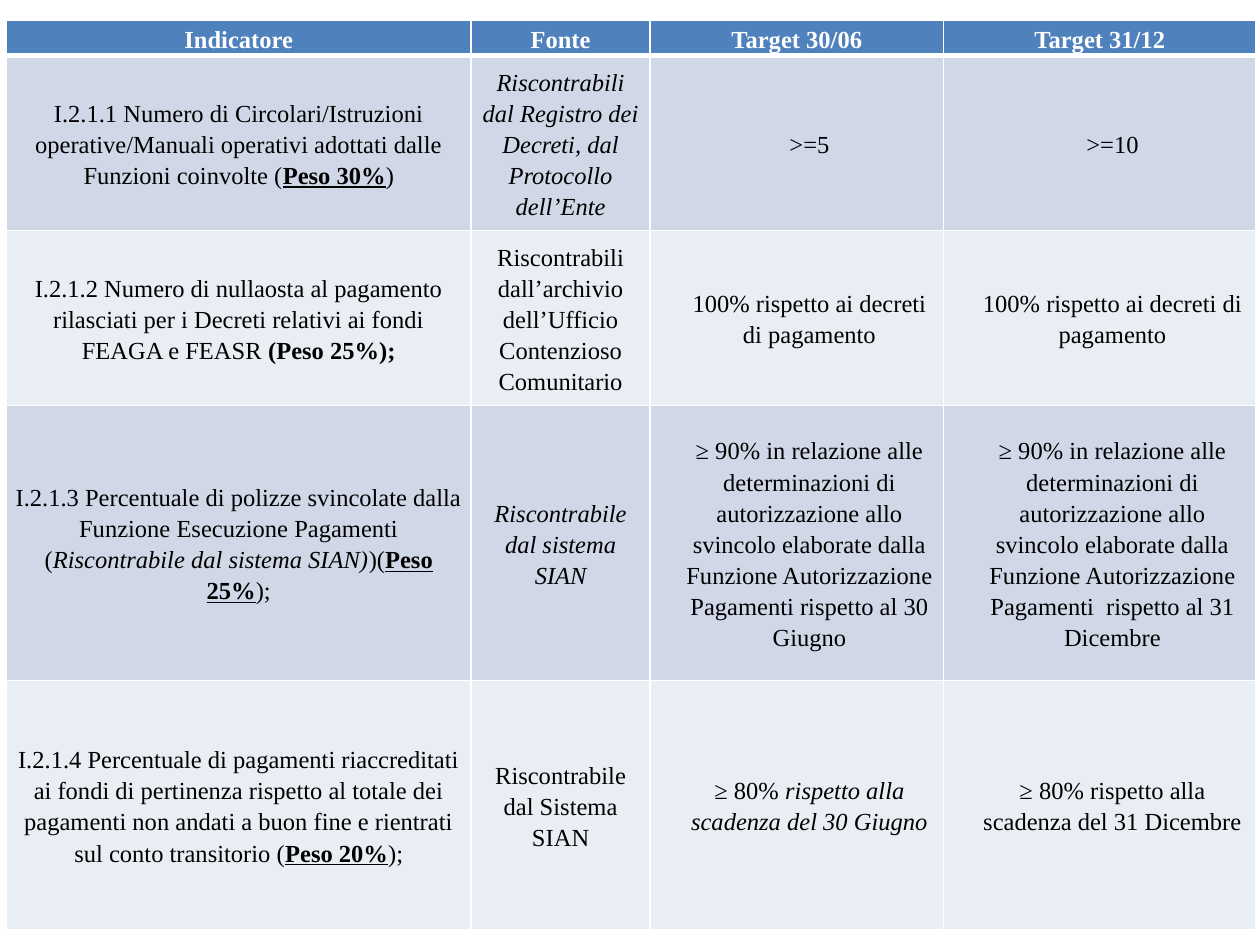
from dataclasses import dataclass

from lxml import etree
from pptx import Presentation
from pptx.dml.color import RGBColor
from pptx.enum.text import MSO_ANCHOR, PP_ALIGN
from pptx.oxml.ns import qn
from pptx.util import Inches, Pt

WHITE = RGBColor(0xFF, 0xFF, 0xFF)
BLACK = RGBColor(0x00, 0x00, 0x00)
HEADER_BLUE = RGBColor(0x4F, 0x81, 0xBD)
BANDS = (RGBColor(0xD0, 0xD8, 0xE8), RGBColor(0xE9, 0xED, 0xF4))

FONT = "Times New Roman"
COLUMN_WIDTHS = (3.69, 1.42, 2.33, 2.48)
ROW_HEIGHTS = (0.28, 1.39, 1.39, 2.18, 1.98)
TARGET_COLUMN = 2  # target columns start here and are indented


@dataclass(frozen=True)
class Span:
    text: str
    bold: bool = False
    italic: bool = False
    underline: bool = False


@dataclass(frozen=True)
class CellStyle:
    fill: RGBColor
    color: RGBColor
    bold: bool = False
    space_after: int = 0
    indent: float = 0
    bottom_line: int = 1


def weight(text: str) -> Span:
    return Span(text, bold=True, underline=True)


def italic(text: str) -> Span:
    return Span(text, italic=True)


HEADINGS = ("Indicatore", "Fonte", "Target 30/06", "Target 31/12")
DETERMINATIONS = (
    "≥ 90% in relazione alle determinazioni di autorizzazione allo svincolo "
    "elaborate dalla Funzione Autorizzazione Pagamenti"
)
PAYMENT_DECREES = "100% rispetto ai decreti di pagamento"

# Each cell is a list of plain strings and formatted spans
INDICATORS = (
    (
        ["I.2.1.1 Numero di Circolari/Istruzioni operative/Manuali operativi "
         "adottati dalle Funzioni coinvolte (", weight("Peso 30%"), ")"],
        [italic("Riscontrabili dal Registro dei Decreti, dal Protocollo dell’Ente")],
        [">=5"],
        [">=10"],
    ),
    (
        ["I.2.1.2 Numero di nullaosta al pagamento rilasciati per i Decreti "
         "relativi ai fondi FEAGA e FEASR ", Span("(Peso 25%);", bold=True)],
        ["Riscontrabili dall’archivio dell’Ufficio Contenzioso Comunitario"],
        [PAYMENT_DECREES],
        [PAYMENT_DECREES],
    ),
    (
        ["I.2.1.3 Percentuale di polizze svincolate dalla Funzione Esecuzione "
         "Pagamenti (", italic("Riscontrabile dal sistema SIAN)"), ")(",
         weight("Peso 25%"), ");"],
        [italic("Riscontrabile dal sistema SIAN")],
        [DETERMINATIONS + " rispetto al 30 Giugno"],
        [DETERMINATIONS + "  rispetto al 31 Dicembre"],
    ),
    (
        ["I.2.1.4 Percentuale di pagamenti riaccreditati ai fondi di pertinenza "
         "rispetto al totale dei pagamenti non andati a buon fine e rientrati sul "
         "conto transitorio (", weight("Peso 20%"), ");"],
        ["Riscontrabile dal Sistema SIAN"],
        ["≥ 80%", italic(" rispetto alla scadenza del 30 Giugno")],
        ["≥ 80% rispetto alla scadenza del 31 Dicembre"],
    ),
)


def set_borders(cell, bottom_line: int) -> None:
    properties = cell._tc.get_or_add_tcPr()
    for side, width in (("L", 1), ("R", 1), ("T", 1), ("B", bottom_line)):
        line = etree.SubElement(properties, qn(f"a:ln{side}"), w=str(Pt(width)))
        fill = etree.SubElement(line, qn("a:solidFill"))
        etree.SubElement(fill, qn("a:srgbClr"), val=str(WHITE))


def fill_cell(cell, spans: list, style: CellStyle) -> None:
    set_borders(cell, style.bottom_line)
    cell.fill.solid()
    cell.fill.fore_color.rgb = style.fill
    cell.vertical_anchor = MSO_ANCHOR.MIDDLE
    cell.margin_left = cell.margin_right = Inches(0.07)
    cell.margin_top = cell.margin_bottom = 0

    paragraph = cell.text_frame.paragraphs[0]
    paragraph.alignment = PP_ALIGN.CENTER
    paragraph.line_spacing = 1.15
    paragraph.space_after = Pt(style.space_after)
    if style.indent:
        paragraph._p.get_or_add_pPr().set("marL", str(Inches(style.indent)))
    paragraph.font.name = FONT
    paragraph.font.size = Pt(14)
    paragraph.font.color.rgb = style.color
    paragraph.font.bold = style.bold
    for item in spans:
        span = item if isinstance(item, Span) else Span(item)
        run = paragraph.add_run()
        run.text = span.text
        if span.bold:
            run.font.bold = True
        if span.italic:
            run.font.italic = True
        if span.underline:
            run.font.underline = True


def main() -> None:
    presentation = Presentation()
    presentation.slide_width, presentation.slide_height = Inches(10), Inches(7.5)
    slide = presentation.slides.add_slide(presentation.slide_layouts[6])

    # Table grid
    targets = slide.shapes.add_table(
        len(ROW_HEIGHTS), len(COLUMN_WIDTHS), Inches(0.05), Inches(0.16),
        Inches(sum(COLUMN_WIDTHS)), Inches(sum(ROW_HEIGHTS)),
    ).table
    for column, width in zip(targets.columns, COLUMN_WIDTHS):
        column.width = Inches(width)
    for row, height in zip(targets.rows, ROW_HEIGHTS):
        row.height = Inches(height)

    # Header row
    header = CellStyle(HEADER_BLUE, WHITE, bold=True, bottom_line=3)
    for column, heading in enumerate(HEADINGS):
        fill_cell(targets.cell(0, column), [heading], header)

    # Indicator rows
    for row, indicator in enumerate(INDICATORS):
        for column, spans in enumerate(indicator):
            indent = 0.2 if column >= TARGET_COLUMN else 0
            body = CellStyle(BANDS[row % 2], BLACK, space_after=6, indent=indent)
            fill_cell(targets.cell(row + 1, column), spans, body)

    presentation.save("out.pptx")


if __name__ == "__main__":
    main()
